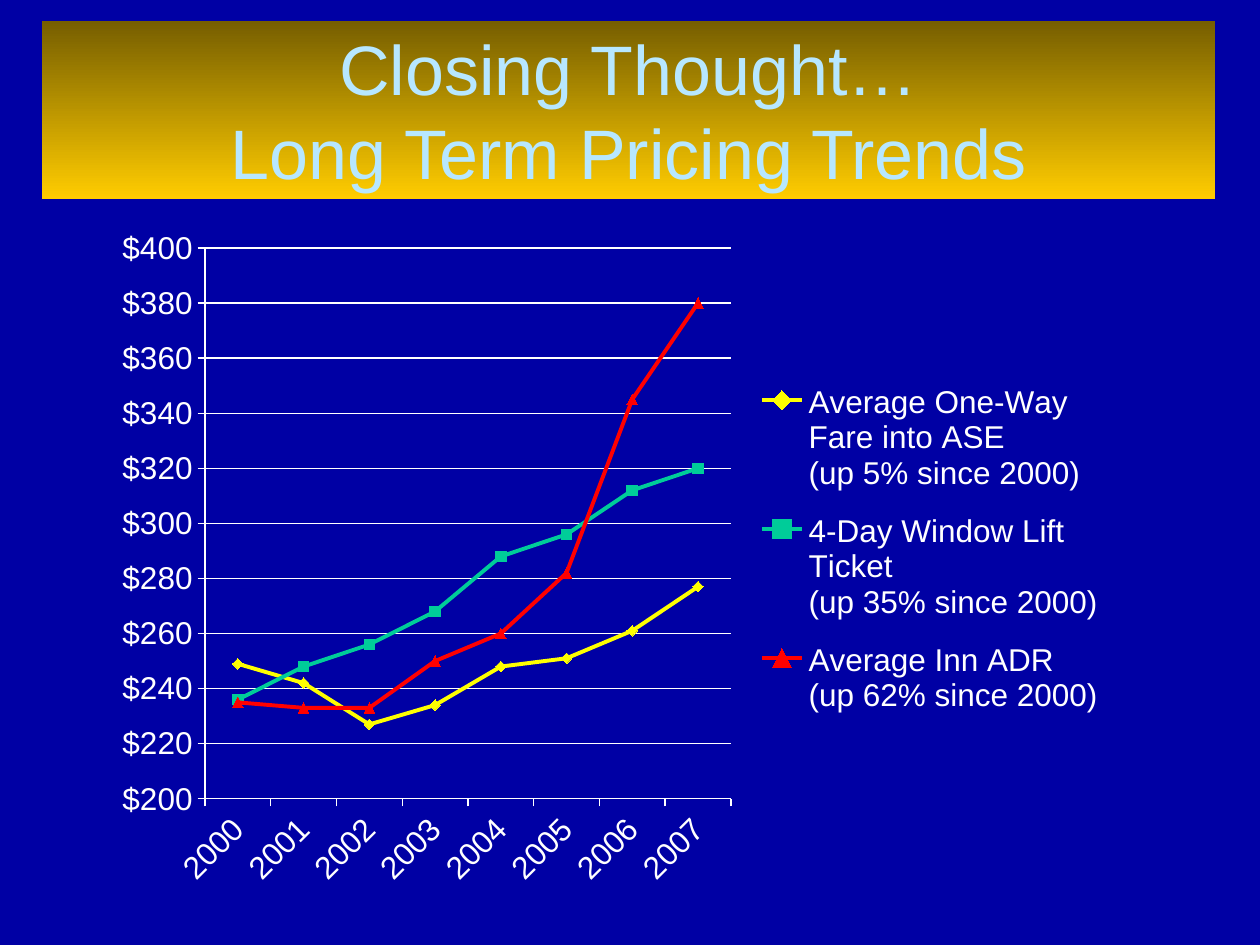
from lxml import etree
from pptx import Presentation
from pptx.chart.data import CategoryChartData
from pptx.dml.color import RGBColor
from pptx.enum.chart import XL_CHART_TYPE, XL_LEGEND_POSITION, XL_MARKER_STYLE, XL_TICK_MARK
from pptx.enum.shapes import MSO_SHAPE
from pptx.enum.text import MSO_ANCHOR, PP_ALIGN
from pptx.oxml.ns import qn
from pptx.util import Emu, Pt

LINE_MARKERS = XL_CHART_TYPE.LINE_MARKERS
LEGEND_RIGHT = XL_LEGEND_POSITION.RIGHT
DIAMOND, SQUARE, TRIANGLE = XL_MARKER_STYLE.DIAMOND, XL_MARKER_STYLE.SQUARE, XL_MARKER_STYLE.TRIANGLE
TICK_OUTSIDE = XL_TICK_MARK.OUTSIDE
RECTANGLE = MSO_SHAPE.RECTANGLE
MIDDLE = MSO_ANCHOR.MIDDLE
CENTER = PP_ALIGN.CENTER

FONT = "Arial"
WHITE = "FFFFFF"
BACKGROUND = "0000A4"
TITLE_COLOR = "B7E7FF"
TITLE_GRADIENT = ("765E00", "FFCC00")
TITLE_LINES = ["Closing Thought…", "Long Term Pricing Trends"]
YEARS = [str(year) for year in range(2000, 2008)]
SERIES = [
    ("Average One-Way Fare into ASE\n(up 5% since 2000)",
     (249, 242, 227, 234, 248, 251, 261, 277), "FFFF00", DIAMOND),
    ("4-Day Window Lift Ticket\n(up 35% since 2000)",
     (236, 248, 256, 268, 288, 296, 312, 320), "00CC99", SQUARE),
    ("Average Inn ADR\n(up 62% since 2000)",
     (235, 233, 233, 250, 260, 282, 345, 380), "FF0000", TRIANGLE),
]
SLIDE_SIZE = (1260, 945)
TITLE_BOX = (42, 21, 1173, 178)
CHART_BOX = (102, 217, 1037, 683)
PLOT_BOX = (205, 248, 526, 551)
LEGEND_BOX = (755, 362, 350, 374)


def px(value):
    return Emu(round(value * 914400 / 126))


def rgb(color):
    return RGBColor.from_string(color)


def add_title(slide):
    shape = slide.shapes.add_shape(RECTANGLE, *map(px, TITLE_BOX))
    shape.shadow.inherit = False
    shape.line.fill.background()
    shape.fill.gradient()
    shape.fill.gradient_angle = 270
    for stop, color, position in zip(shape.fill.gradient_stops, TITLE_GRADIENT, (0, 1)):
        stop.color.rgb = rgb(color)
        stop.position = position
    frame = shape.text_frame
    frame.text = "\n".join(TITLE_LINES)
    frame.word_wrap = True
    frame.vertical_anchor = MIDDLE
    for paragraph in frame.paragraphs:
        paragraph.alignment = CENTER
        font = paragraph.runs[0].font
        font.name, font.size = FONT, Pt(40)
        font.color.rgb = rgb(TITLE_COLOR)


def set_layout(layout, box, inner=False):
    """Place a chart part at a slide box, as fractions of the chart."""
    for child in list(layout):
        layout.remove(child)
    left, top, width, height = CHART_BOX
    values = [("xMode", "edge"), ("yMode", "edge"),
              ("x", round((box[0] - left) / width, 4)), ("y", round((box[1] - top) / height, 4)),
              ("w", round(box[2] / width, 4)), ("h", round(box[3] / height, 4))]
    if inner:
        values.insert(0, ("layoutTarget", "inner"))
    manual = etree.SubElement(layout, qn("c:manualLayout"))
    for tag, value in values:
        etree.SubElement(manual, qn(f"c:{tag}")).set("val", str(value))


def layout_of(part, index):
    layout = part.find(qn("c:layout"))
    if layout is None:
        layout = etree.Element(qn("c:layout"))
        part.insert(index, layout)
    return layout


def style_line(line, color, width):
    line.color.rgb = rgb(color)
    line.width = Pt(width)


def add_price_chart(slide):
    data = CategoryChartData()
    data.categories = YEARS
    for name, values, _, _ in SERIES:
        data.add_series(name, values)
    chart = slide.shapes.add_chart(LINE_MARKERS, *map(px, CHART_BOX), data).chart
    chart.has_title = False
    chart.font.name, chart.font.size = FONT, Pt(18)
    chart.font.color.rgb = rgb(WHITE)

    for axis in (chart.category_axis, chart.value_axis):
        axis.major_tick_mark = TICK_OUTSIDE
        style_line(axis.format.line, WHITE, 0.75)
        labels = axis.tick_labels.font
        labels.name, labels.size = FONT, Pt(18)
        labels.color.rgb = rgb(WHITE)
    text = chart.category_axis._element.find(qn("c:txPr"))
    text.find(qn("a:bodyPr")).set("rot", "-2700000")
    prices = chart.value_axis
    prices.minimum_scale, prices.maximum_scale, prices.major_unit = 200, 400, 20
    prices.tick_labels.number_format = '"$"#,##0'
    prices.tick_labels.number_format_is_linked = False
    prices.has_major_gridlines = True
    style_line(prices.major_gridlines.format.line, WHITE, 0.75)

    chart.plots[0].vary_by_categories = False
    for series, (_, _, color, marker) in zip(chart.plots[0].series, SERIES):
        series.smooth = False
        style_line(series.format.line, color, 2.25)
        series.marker.style, series.marker.size = marker, 6
        series.marker.format.fill.solid()
        series.marker.format.fill.fore_color.rgb = rgb(color)
        style_line(series.marker.format.line, color, 0.75)

    chart.has_legend = True
    legend = chart.legend
    legend.position = LEGEND_RIGHT
    legend.include_in_layout = False
    legend.font.name, legend.font.size = FONT, Pt(18)
    legend.font.color.rgb = rgb(WHITE)
    set_layout(layout_of(legend._element, 1), LEGEND_BOX)
    plot_area = chart._chartSpace.find(f".//{qn('c:plotArea')}")
    set_layout(layout_of(plot_area, 0), PLOT_BOX, inner=True)


def main():
    presentation = Presentation()
    presentation.slide_width, presentation.slide_height = map(px, SLIDE_SIZE)
    slide = presentation.slides.add_slide(presentation.slide_layouts[6])
    slide.background.fill.solid()
    slide.background.fill.fore_color.rgb = rgb(BACKGROUND)
    add_price_chart(slide)
    add_title(slide)
    presentation.save("out.pptx")


if __name__ == "__main__":
    main()
